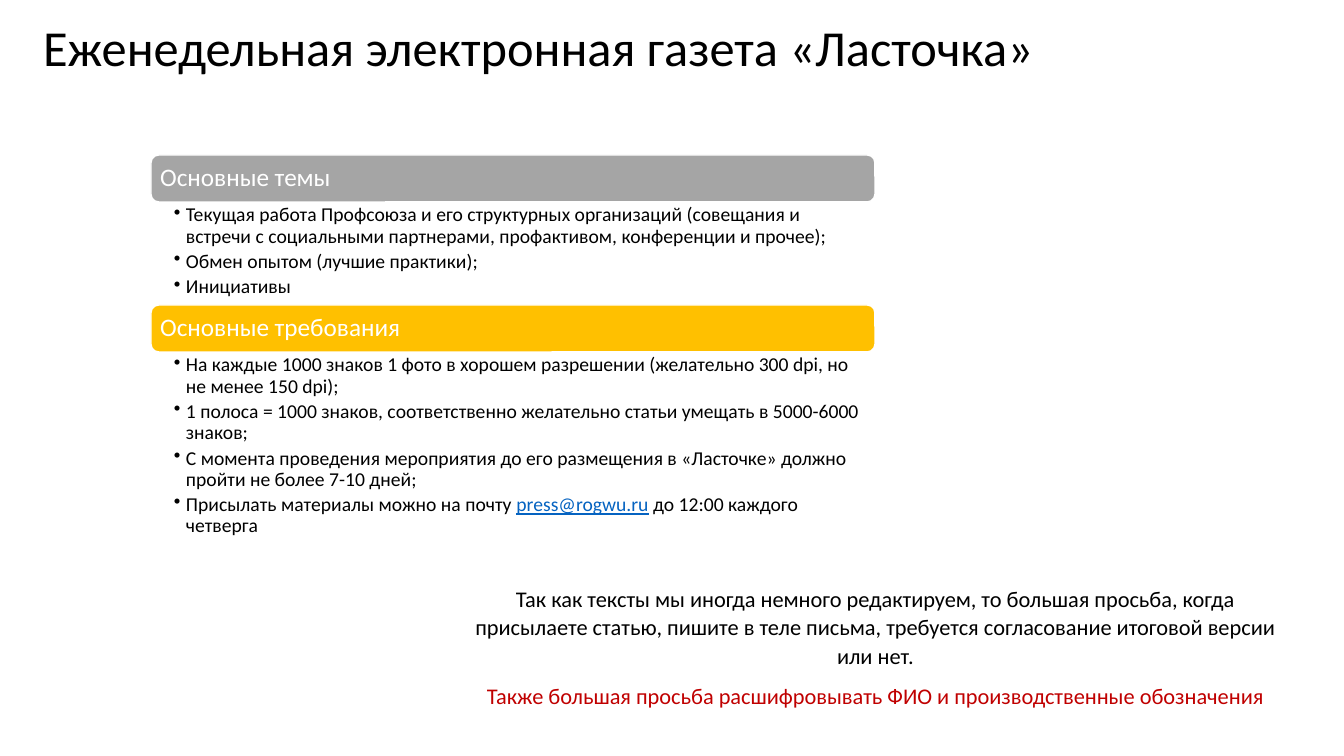
from lxml import etree
from pptx import Presentation
from pptx.dml.color import RGBColor
from pptx.enum.shapes import MSO_SHAPE
from pptx.enum.text import MSO_ANCHOR, PP_ALIGN
from pptx.oxml.ns import qn
from pptx.util import Emu, Pt

ROUNDED = MSO_SHAPE.ROUNDED_RECTANGLE
MIDDLE, TOP = MSO_ANCHOR.MIDDLE, MSO_ANCHOR.TOP
LEFT, CENTER = PP_ALIGN.LEFT, PP_ALIGN.CENTER

BLACK = RGBColor(0x00, 0x00, 0x00)
WHITE = RGBColor(0xFF, 0xFF, 0xFF)
GRAY = RGBColor(0xA5, 0xA5, 0xA5)
AMBER = RGBColor(0xFF, 0xC0, 0x00)
RED = RGBColor(0xC0, 0x00, 0x00)
LINK_BLUE = RGBColor(0x05, 0x63, 0xC1)

PX = 914400 / 100.8
EMAIL = "press@rogwu.ru"


def px(*lengths):
    return [Emu(round(length * PX)) for length in lengths]


def write(shape, paragraphs, size, colors=(BLACK,), insets=(10, 5, 10, 5),
          anchor=TOP, align=LEFT, line_spacing=0.9, after=0, hanging=0):
    frame = shape.text_frame
    frame.word_wrap = True
    frame.vertical_anchor = anchor
    (frame.margin_left, frame.margin_top,
     frame.margin_right, frame.margin_bottom) = px(*insets)
    for i, text in enumerate(paragraphs):
        paragraph = frame.paragraphs[0] if i == 0 else frame.add_paragraph()
        paragraph.alignment = align
        paragraph.line_spacing = line_spacing
        paragraph.space_after = Pt(after)
        if hanging:
            indent = px(hanging)[0]
            properties = paragraph._p.get_or_add_pPr()
            properties.set("marL", str(indent))
            properties.set("indent", str(-indent))
            etree.SubElement(properties, qn("a:buChar")).set("char", "•")
        # The address is set apart as a run of its own
        before, address, rest = text.partition(EMAIL)
        for part in filter(None, (before, address, rest)):
            run = paragraph.add_run()
            run.text = part
            run.font.name = "Calibri"
            run.font.size = Pt(size)
            run.font.color.rgb = colors[i % len(colors)]
            if part == EMAIL:
                run.font.color.rgb = LINK_BLUE
                run.font.underline = True


deck = Presentation()
deck.slide_width, deck.slide_height = px(1344, 756)
slide = deck.slides.add_slide(deck.slide_layouts[6])
shapes = slide.shapes

# Title
title = shapes.add_textbox(*px(33, -23, 1159, 146))
write(title, ["Еженедельная электронная газета «Ласточка»"], 36, anchor=MIDDLE)

# Sections: coloured heading bar with its bullet list below
SECTION_LEFT, SECTION_WIDTH, BAR_HEIGHT = 151, 724, 47
sections = [
    ("Основные темы", GRAY, 103, [
        "Текущая работа Профсоюза и его структурных организаций (совещания и "
        "встречи с социальными партнерами, профактивом, конференции и прочее);",
        "Обмен опытом (лучшие практики);",
        "Инициативы",
    ]),
    ("Основные требования", AMBER, 194, [
        "На каждые 1000 знаков 1 фото в хорошем разрешении (желательно 300 dpi, "
        "но не менее 150 dpi);",
        "1 полоса = 1000 знаков, соответственно желательно статьи умещать "
        "в 5000-6000 знаков;",
        "С момента проведения мероприятия до его размещения в «Ласточке» должно "
        "пройти не более 7-10 дней;",
        f"Присылать материалы можно на почту {EMAIL} до 12:00 каждого четверга",
    ]),
]
top = 155
for heading, color, list_height, points in sections:
    bar = shapes.add_shape(ROUNDED, *px(SECTION_LEFT, top, SECTION_WIDTH, BAR_HEIGHT))
    bar.shadow.inherit = False
    bar.fill.solid()
    bar.fill.fore_color.rgb = color
    bar.line.color.rgb = WHITE
    bar.line.width = Pt(1)
    write(bar, [heading], 18, colors=(WHITE,), insets=(7, 7, 7, 7), anchor=MIDDLE)
    top += BAR_HEIGHT

    bullets = shapes.add_textbox(*px(SECTION_LEFT, top, SECTION_WIDTH, list_height))
    write(bullets, points, 14, insets=(23, 3, 14, 3), after=3, hanging=12)
    top += list_height

# Requests to authors
requests = shapes.add_textbox(*px(458, 578, 835, 136))
write(requests, [
    "Так как тексты мы иногда немного редактируем, то большая просьба, когда "
    "присылаете статью, пишите в теле письма, требуется согласование итоговой "
    "версии или нет.",
    "Также большая просьба расшифровывать ФИО и производственные обозначения",
], 16, colors=(BLACK, RED), align=CENTER, line_spacing=1.07, after=8)

deck.save("out.pptx")
